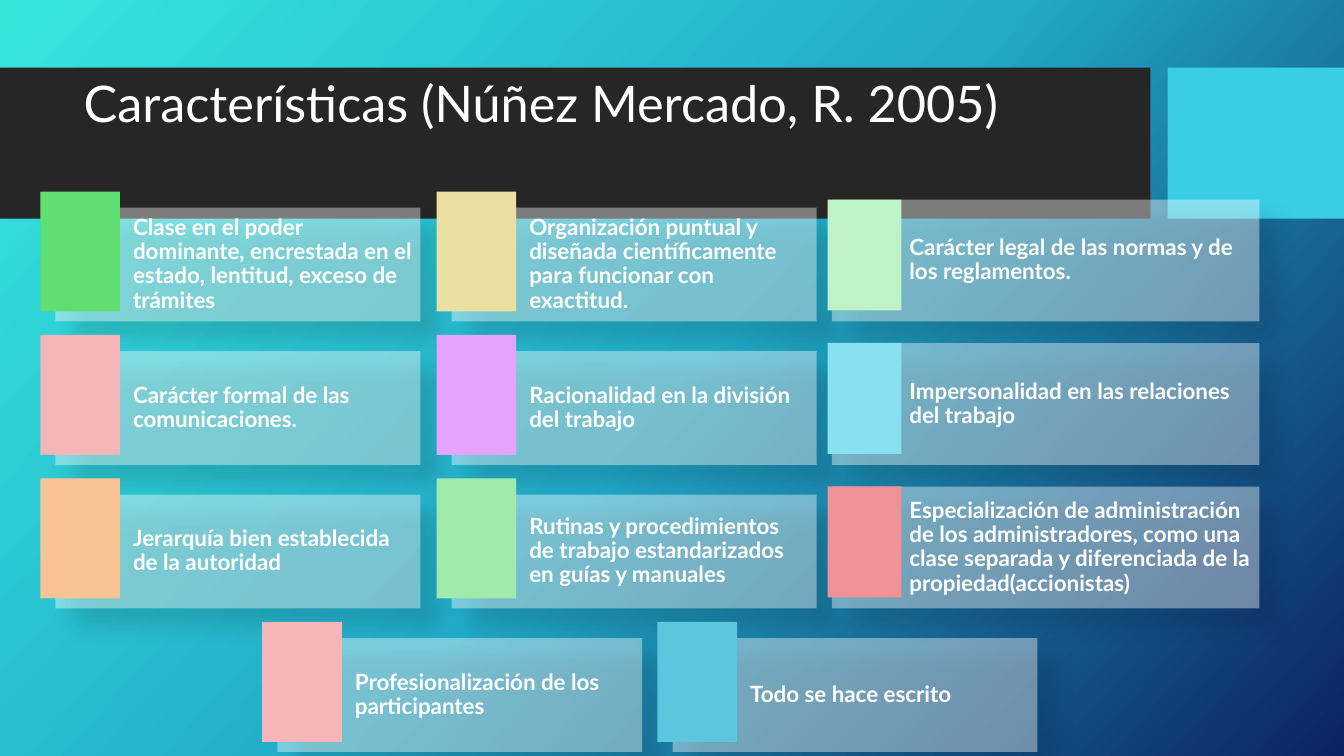
from dataclasses import dataclass

from pptx import Presentation
from pptx import util as u
from pptx.dml.color import RGBColor
from pptx.enum import shapes, text
from pptx.oxml import parse_xml
from pptx.oxml.ns import nsdecls

FONT = "Lato"
TOP = 1.9
PITCH = (6.17 - TOP) / 3
COLORS = {
    "white": "FFFFFF", "black": "000000", "band": "262626", "accent": "39CDE7",
    "green": "60DE72", "sand": "EBE0A2", "mint": "BFF2C7", "pink": "F4B6B9",
    "lilac": "E6A3FB", "sky": "88E1F1", "peach": "F8C496", "lime": "A0EBAA",
    "coral": "EF9297", "teal": "5BC6DD",
    "start": "36E6DD", "middle": "21ABC8", "end": "0C2263",
}


@dataclass(frozen=True)
class Box:
    left: float
    top: float
    width: float
    height: float

    def place(self, left: float, top: float) -> tuple:
        sides = (left + self.left, top + self.top, self.width, self.height)
        return tuple(u.Inches(side) for side in sides)


@dataclass(frozen=True)
class Style:
    tile: Box
    panel: Box


@dataclass(frozen=True)
class Card:
    left: float
    row: int
    style: Style
    color: str
    label: str


SLIM = Style(Box(0, 0, 0.79, 1.19), Box(0.15, 0.16, 3.62, 1.13))
WIDE = Style(Box(0, 0.08, 0.73, 1.1), Box(0.04, 0.08, 4.24, 1.21))
COLUMNS = ((0.4, SLIM), (4.33, SLIM), (8.21, WIDE))
ENDS = ((2.6, SLIM), (6.52, SLIM))
ROWS = (
    (COLUMNS, (
        ("green", "Clase en el poder dominante, encrestada en el estado, lentitud, exceso de trámites"),
        ("sand", "Organización puntual y diseñada científicamente para funcionar con exactitud."),
        ("mint", "Carácter legal de las normas y de los reglamentos."))),
    (COLUMNS, (
        ("pink", "Carácter formal de las comunicaciones."),
        ("lilac", "Racionalidad en la división del trabajo"),
        ("sky", "Impersonalidad en las relaciones del trabajo"))),
    (COLUMNS, (
        ("peach", "Jerarquía bien establecida de la autoridad"),
        ("lime", "Rutinas y procedimientos de trabajo estandarizados en guías y manuales"),
        ("coral", "Especialización de administración de los administradores, como una clase "
                  "separada y diferenciada de la propiedad(accionistas)"))),
    (ENDS, (
        ("pink", "Profesionalización de los participantes"),
        ("teal", "Todo se hace escrito"))),
)
CARDS = [
    Card(left, row, style, color, label)
    for row, (spots, items) in enumerate(ROWS)
    for (left, style), (color, label) in zip(spots, items)
]


def rgb(name: str) -> RGBColor:
    return RGBColor.from_string(COLORS[name])


def paint(slide) -> None:
    stops = "".join(
        f'<a:gs pos="{spot}"><a:srgbClr val="{COLORS[name]}"/></a:gs>'
        for spot, name in ((0, "start"), (50000, "middle"), (100000, "end")))
    fill = slide.background.fill
    fill.solid()
    bg = slide._element.cSld.bg.bgPr
    bg.replace(bg[0], parse_xml(
        f'<a:gradFill {nsdecls("a")} rotWithShape="1"><a:gsLst>{stops}</a:gsLst>'
        '<a:lin ang="2520000" scaled="0"/></a:gradFill>'))


def rect(slide, place: tuple, color: str):
    shape = slide.shapes.add_shape(shapes.MSO_SHAPE.RECTANGLE, *place)
    shape.shadow.inherit = False
    shape.fill.solid()
    shape.fill.fore_color.rgb = rgb(color)
    shape.line.fill.background()
    return shape


def soften(shape) -> None:
    props = shape._element.spPr
    tint = props.find(".//{*}solidFill/{*}srgbClr")
    tint.append(parse_xml(f'<a:alpha {nsdecls("a")} val="40000"/>'))
    effects = props.find("{*}effectLst")
    effects.append(parse_xml(
        f'<a:outerShdw {nsdecls("a")} blurRad="{u.Pt(15)}" dist="{u.Pt(18)}" '
        'dir="2700000" algn="tl" rotWithShape="0">'
        f'<a:srgbClr val="{COLORS["black"]}"><a:alpha val="30000"/></a:srgbClr>'
        '</a:outerShdw>'))


def write(frame, words: str, size: int, bold: bool) -> None:
    frame.text = words
    frame.word_wrap = True
    frame.auto_size = text.MSO_AUTO_SIZE.NONE
    frame.vertical_anchor = text.MSO_ANCHOR.MIDDLE
    line = frame.paragraphs[0]
    line.alignment = text.PP_ALIGN.LEFT
    line.line_spacing = 0.9
    line.font.name = FONT
    line.font.size = u.Pt(size)
    line.font.bold = bold
    line.font.color.rgb = rgb("white")


def draw(slide, card: Card) -> None:
    top = TOP + card.row * PITCH
    place = card.style.panel.place(card.left, top)
    soften(rect(slide, place, "white"))
    frame = slide.shapes.add_textbox(*place).text_frame
    frame.margin_left = u.Inches(0.77)
    frame.margin_top = frame.margin_right = frame.margin_bottom = u.Inches(0.07)
    write(frame, card.label, 16, True)
    rect(slide, card.style.tile.place(card.left, top), card.color)


def main() -> None:
    deck = Presentation()
    deck.slide_width, deck.slide_height = u.Inches(13.33), u.Inches(7.5)
    slide = deck.slides.add_slide(deck.slide_layouts[5])
    paint(slide)
    rect(slide, Box(0, 0.67, 11.41, 1.5).place(0, 0), "band")
    rect(slide, Box(11.58, 0.67, 1.75, 1.5).place(0, 0), "accent")
    title = slide.shapes.title
    title.left, title.top, title.width, title.height = Box(0.73, 0.46, 10.51, 1.18).place(0, 0)
    write(title.text_frame, "Características (Núñez Mercado, R. 2005)", 36, False)
    slide.shapes._spTree.append(title._element)
    for card in CARDS:
        draw(slide, card)
    deck.save("out.pptx")


if __name__ == "__main__":
    main()
